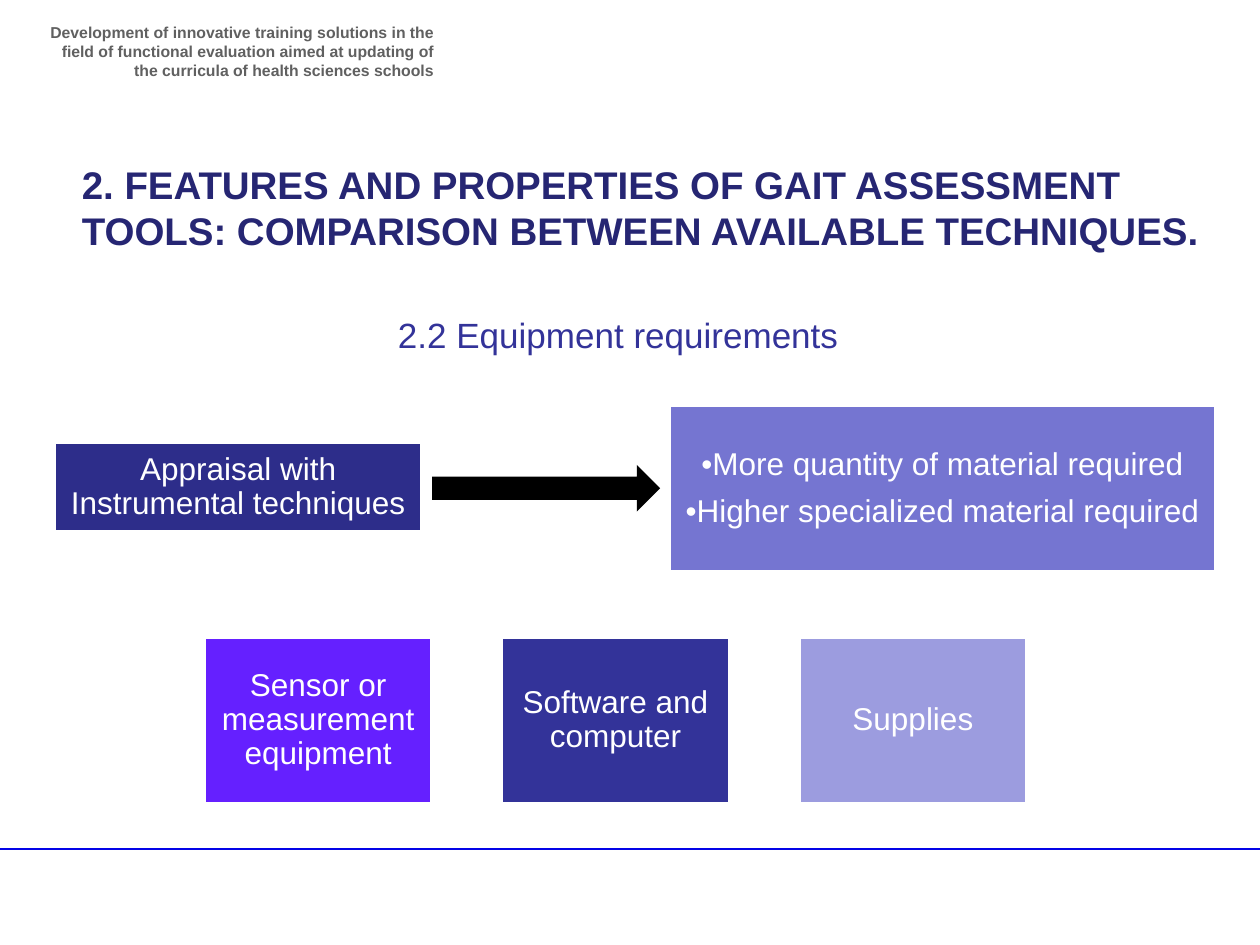
import pptx
import pptx.util
import pptx.dml.color
import pptx.enum.shapes
import pptx.enum.text
import pptx.oxml
from dataclasses import dataclass

Inches = pptx.util.Inches
Pt = pptx.util.Pt
Align = pptx.enum.text.PP_ALIGN
Anchor = pptx.enum.text.MSO_ANCHOR
Shape = pptx.enum.shapes.MSO_SHAPE


@dataclass
class Theme:
    font: str = "Arial"
    header: str = "606060"
    title: str = "262673"
    subtitle: str = "333399"
    white: str = "FFFFFF"
    black: str = "000000"
    rule: str = "0404E6"
    appraisal: str = "2D2D8A"
    requirements: str = "7575D1"
    sensor: str = "6520FF"
    software: str = "333399"
    supplies: str = "9C9CDF"
    header_size: int = 9
    title_size: int = 22
    subtitle_size: int = 20
    block_size: int = 18


theme = Theme()
rgb = pptx.dml.color.RGBColor.from_string


def write(box, lines, size, color, align, bold=False):
    frame = box.text_frame
    frame.word_wrap = True
    frame.text = "\n".join(lines)
    for para in frame.paragraphs:
        para.alignment = align
        for span in para.runs:
            span.font.name = theme.font
            span.font.size = Pt(size)
            span.font.bold = bold
            span.font.color.rgb = rgb(color)
    return frame


def add_block(page, left, top, width, height, fill, lines):
    box = page.shapes.add_shape(
        Shape.RECTANGLE, Inches(left), Inches(top), Inches(width), Inches(height))
    box.shadow.inherit = False
    box.fill.solid()
    box.fill.fore_color.rgb = rgb(fill)
    box.line.color.rgb = rgb(theme.white)
    box.line.width = Pt(2)
    frame = write(box, lines, theme.block_size, theme.white, Align.CENTER)
    frame.vertical_anchor = Anchor.MIDDLE
    frame.margin_left = frame.margin_right = Inches(0.01)
    frame.margin_top = frame.margin_bottom = Inches(0.01)
    for para in frame.paragraphs:
        para.line_spacing = 0.9
        para.space_after = Pt(7)


deck = pptx.Presentation()
deck.slide_width = Inches(10)
deck.slide_height = Inches(7.5)
page = deck.slides.add_slide(deck.slide_layouts[5])

rule = page.shapes.add_connector(
    pptx.enum.shapes.MSO_CONNECTOR.STRAIGHT,
    Inches(-0.05), Inches(6.74), Inches(10), Inches(6.74))
rule.line.color.rgb = rgb(theme.rule)
rule.line.width = Pt(1)
rule._element.spPr.append(pptx.oxml.parse_xml(
    '<a:effectLst xmlns:a="http://schemas.openxmlformats.org/drawingml/2006/main"/>'))

header = page.shapes.add_textbox(Inches(0.28), Inches(0.13), Inches(3.26), Inches(0.47))
write(header,
      ["Development of innovative training solutions in the ﬁeld of functional "
       "evaluation aimed at updating of the curricula of health sciences schools"],
      theme.header_size, theme.header, Align.RIGHT, bold=True)

title = page.shapes.title
title.left, title.top = Inches(0.55), Inches(1.23)
title.width, title.height = Inches(9.09), Inches(0.84)
frame = write(title,
              ["2. FEATURES AND PROPERTIES OF GAIT ASSESSMENT TOOLS: "
               "COMPARISON BETWEEN AVAILABLE TECHNIQUES."],
              theme.title_size, theme.title, Align.LEFT, bold=True)
frame.vertical_anchor = Anchor.TOP
frame.auto_size = pptx.enum.text.MSO_AUTO_SIZE.NONE

subtitle = page.shapes.add_textbox(Inches(3.06), Inches(2.44), Inches(3.88), Inches(0.77))
write(subtitle, ["2.2 Equipment requirements"],
      theme.subtitle_size, theme.subtitle, Align.LEFT)

add_block(page, 0.43, 3.51, 2.92, 0.71, theme.appraisal,
          ["Appraisal with Instrumental techniques"])

arrow = page.shapes.add_shape(
    Shape.RIGHT_ARROW, Inches(3.43), Inches(3.69), Inches(1.81), Inches(0.37))
arrow.shadow.inherit = False
arrow.fill.solid()
arrow.fill.fore_color.rgb = rgb(theme.black)
arrow.line.fill.background()

add_block(page, 5.31, 3.22, 4.34, 1.32, theme.requirements,
          ["•More quantity of material required",
           "•Higher specialized material required"])

equipment = [
    ("Sensor or measurement equipment", theme.sensor),
    ("Software and computer", theme.software),
    ("Supplies", theme.supplies),
]
for index, (label, fill) in enumerate(equipment):
    add_block(page, 1.62 + 2.36 * index, 5.06, 1.81, 1.32, fill, [label])

deck.save("out.pptx")
